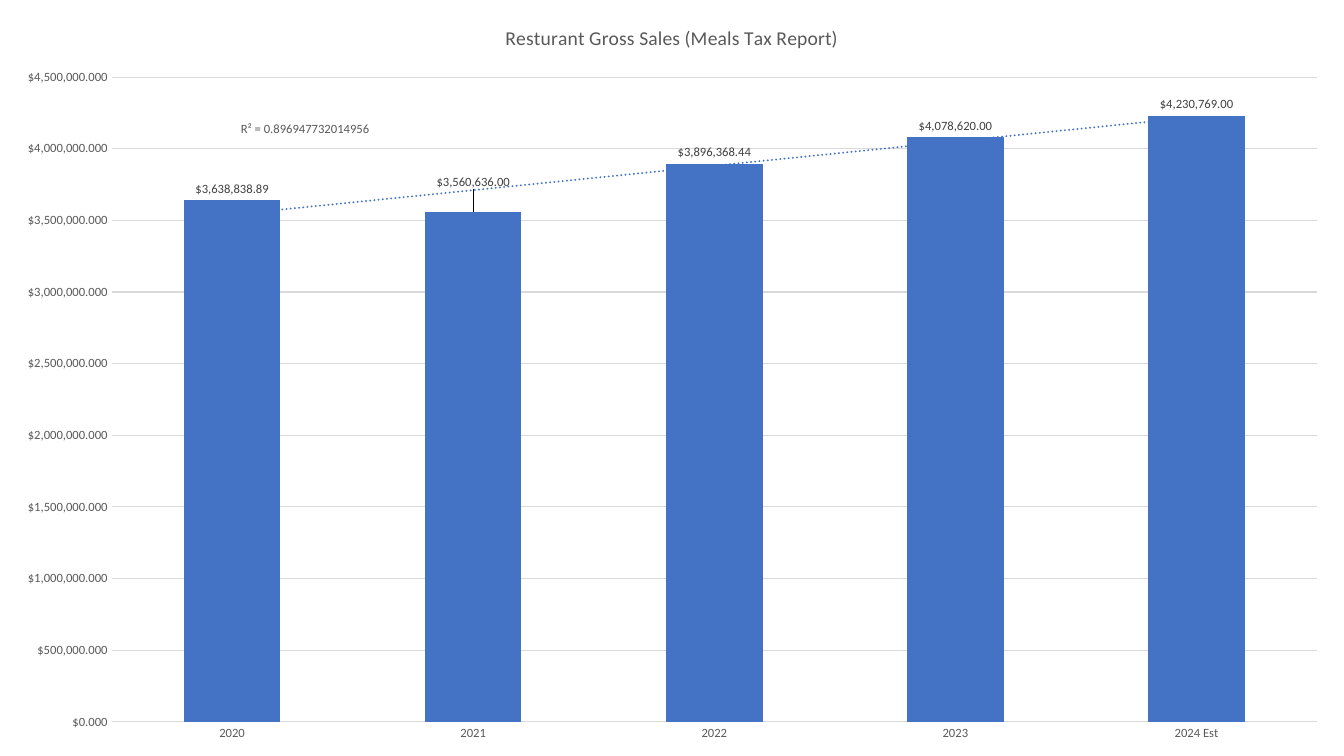
from pptx import Presentation, util as u
from pptx.chart import data as cd
from pptx.dml import color as dc
from pptx.enum import chart as ce, text as te
from pptx.oxml import parse_xml
from pptx.oxml.ns import nsdecls, qn

MONEY = "$#,##0.00"


def tint(code):
    return dc.RGBColor.from_string(code)


def node(body):
    tag, rest = body.split(">", 1)
    return parse_xml(f"{tag} {nsdecls('c', 'a')}>{rest}")


def place(x, y, w=None, h=None, inner=False, edge=True):
    body = '<c:layoutTarget val="inner"/>' if inner else ""
    if edge:
        body += '<c:xMode val="edge"/><c:yMode val="edge"/>'
    sides = {"x": x, "y": y, "w": w, "h": h}
    body += "".join(f'<c:{k} val="{v}"/>' for k, v in sides.items() if v is not None)
    return f"<c:layout><c:manualLayout>{body}</c:manualLayout></c:layout>"


class Deck:
    """Hold the style and the current slide."""

    face, blue, gray, dark, pale = "Calibri", "4472C4", "595959", "404040", "D9D9D9"

    def __init__(self):
        self.prs = Presentation()
        self.prs.slide_width, self.prs.slide_height = u.Pt(960), u.Pt(540)
        self.slide = self.prs.slides.add_slide(self.prs.slide_layouts[6])

    def font(self, font, size, color):
        font.name, font.size, font.bold = self.face, u.Pt(size), False
        font.color.rgb = tint(color)

    def line(self, line, color):
        line.color.rgb, line.width = tint(color), u.Pt(0.75)

    def chart(self, names, sales):
        data = cd.CategoryChartData(number_format=MONEY)
        data.categories = names
        data.add_series("Series 1", sales)
        chart = self.slide.shapes.add_chart(
            ce.XL_CHART_TYPE.COLUMN_CLUSTERED, 0, 0, u.Pt(960), u.Pt(540), data
        ).chart
        chart.has_legend = False
        self.font(chart.font, 10, "000000")
        area = chart.plots[0]._element.getparent()
        for old in area.findall(qn("c:layout")):
            area.remove(old)
        area.insert(0, node(place(0.083, 0.102, 0.897, 0.853, inner=True)))
        plot = chart.plots[0]
        plot.gap_width, plot.vary_by_categories = 150, False
        bars = plot.series[0]
        bars.format.fill.solid()
        bars.format.fill.fore_color.rgb = tint(self.blue)
        return chart

    def title(self, chart, words):
        title = chart.chart_title
        title.text_frame.text = words
        self.font(title.text_frame.paragraphs[0].runs[0].font, 14, self.gray)
        title._element.find(qn("c:tx")).addnext(node(place(0.376, 0.036)))

    def axes(self, chart):
        for axis in (chart.category_axis, chart.value_axis):
            axis.major_tick_mark = axis.minor_tick_mark = ce.XL_TICK_MARK.NONE
            self.font(axis.tick_labels.font, 9, self.gray)
        self.line(chart.category_axis.format.line, self.pale)
        axis = chart.value_axis
        axis.minimum_scale, axis.maximum_scale, axis.major_unit = 0, 4500000, 500000
        axis.format.line.fill.background()
        self.line(axis.major_gridlines.format.line, self.pale)
        axis.tick_labels.number_format = "$#,##0.000"
        axis.tick_labels.number_format_is_linked = False

    def labels(self, bars, raised):
        tags = bars.data_labels
        tags.show_value = True
        tags.number_format, tags.number_format_is_linked = MONEY, False
        tag = bars.points[raised].data_label
        for item in (tags, tag):
            item.position = ce.XL_LABEL_POSITION.OUTSIDE_END
            self.font(item.font, 9, self.dark)
        spot = tags._element.find(qn("c:dLbl")).find(qn("c:idx"))
        spot.addnext(node(f'<c:numFmt formatCode="{MONEY}" sourceLinked="0"></c:numFmt>'))
        spot.addnext(node(place(0, -0.024, edge=False)))

    def trend(self, bars):
        bars._element.find(qn("c:cat")).addprevious(node(
            f'<c:trendline><c:spPr><a:ln w="{u.Pt(1.5)}" cap="rnd"><a:solidFill>'
            f'<a:srgbClr val="{self.blue}"/></a:solidFill><a:prstDash val="sysDot"/>'
            '</a:ln></c:spPr><c:trendlineType val="linear"/><c:dispRSqr val="0"/>'
            '<c:dispEq val="0"/></c:trendline>'
        ))

    def note(self, words, left, top, width, height):
        frame = self.slide.shapes.add_textbox(
            u.Pt(left), u.Pt(top), u.Pt(width), u.Pt(height)
        ).text_frame
        frame.word_wrap = True
        frame.margin_left = frame.margin_right = 0
        frame.margin_top = frame.margin_bottom = 0
        frame.vertical_anchor = te.MSO_ANCHOR.MIDDLE
        frame.text = words
        self.font(frame.paragraphs[0].runs[0].font, 9, self.gray)


def main():
    deck = Deck()
    chart = deck.chart(
        ["2020", "2021", "2022", "2023", "2024 Est"],
        [3638838.89, 3560636, 3896368.44, 4078620, 4230769],
    )
    deck.title(chart, "Resturant Gross Sales (Meals Tax Report)")
    deck.axes(chart)
    bars = chart.plots[0].series[0]
    deck.labels(bars, raised=1)
    deck.trend(bars)
    deck.note("R² = 0.896947732014956", 172, 85, 110, 14)
    deck.prs.save("out.pptx")


if __name__ == "__main__":
    main()
